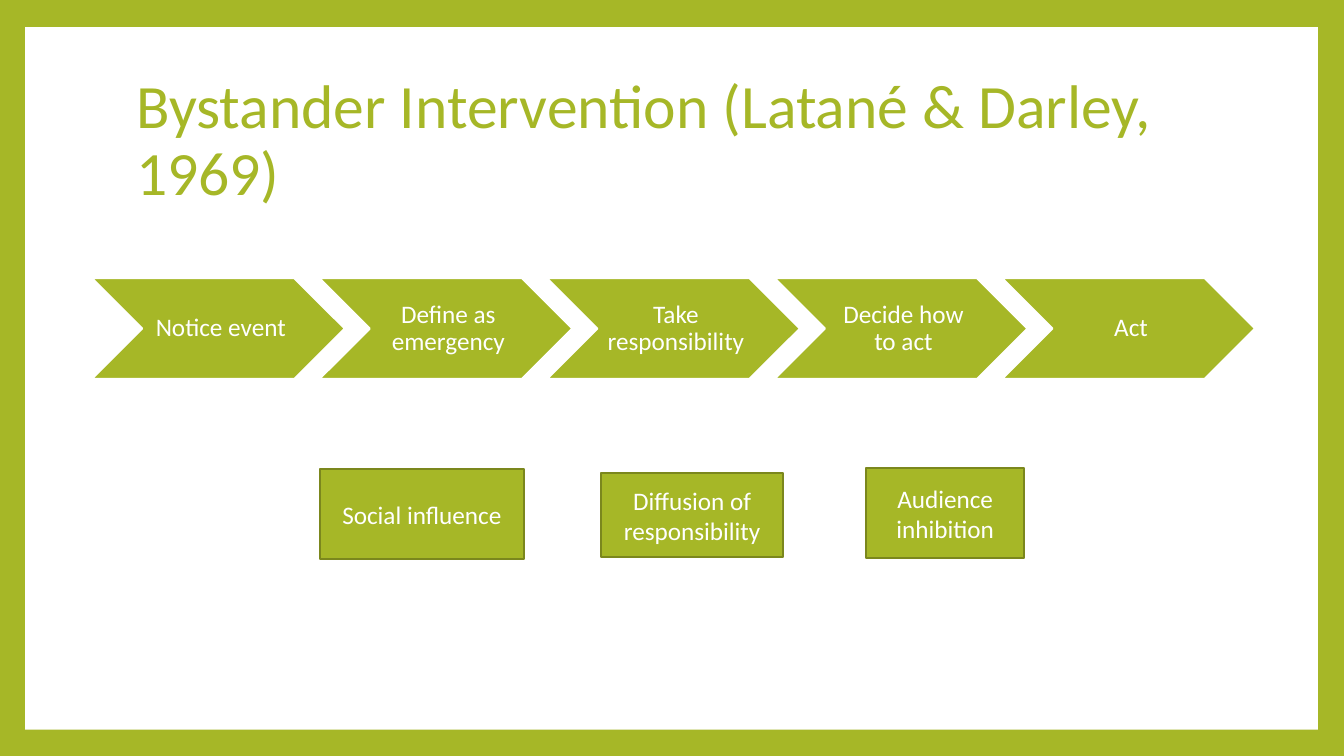
from pptx import Presentation
from pptx.dml.color import RGBColor
from pptx.enum import shapes, text
from pptx.util import Inches, Pt

TITLE = "Bystander Intervention (Latané & Darley, 1969)"
STEPS = ["Notice event", "Define as emergency", "Take responsibility",
         "Decide how to act", "Act"]
BARRIERS = [
    ("Social influence", (3.17, 4.65, 2.03, 0.9)),
    ("Diffusion of responsibility", (5.96, 4.69, 1.81, 0.84)),
    ("Audience inhibition", (8.59, 4.64, 1.57, 0.9)),
]

THEME = {
    "green": RGBColor.from_string("A6B727"),
    "edge": RGBColor.from_string("7B871D"),
    "white": RGBColor.from_string("FFFFFF"),
    "font": "Calibri", "title": Pt(44), "label": Pt(18), "line": Pt(1.5),
}
SIZE = (13.33, 7.5)
PANEL = (0.25, 0.27, 12.82, 6.97)
HEAD = (1.25, 0.67, 10.8, 1.48)
FLOW = {"left": 0.91, "top": 2.76, "wide": 2.51, "high": 1, "step": 2.257}
PADS = {"margin_left": Inches(0.08), "margin_right": Inches(0.03),
        "margin_top": Inches(0.03), "margin_bottom": Inches(0.03)}
KIND = shapes.MSO_SHAPE


def apply(item, values):
    for name, value in values.items():
        setattr(item, name, value)


def place(item, box):
    names = ("left", "top", "width", "height")
    apply(item, dict(zip(names, map(Inches, box))))


def write(item, words, size, color, align, spacing=None, pads=None):
    frame = item.text_frame
    frame.text = words
    apply(frame, {"word_wrap": True, "auto_size": text.MSO_AUTO_SIZE.NONE,
                  "vertical_anchor": text.MSO_ANCHOR.MIDDLE, **(pads or {})})
    para = frame.paragraphs[0]
    apply(para, {"alignment": align, "line_spacing": spacing})
    font = para.runs[0].font
    apply(font, {"name": THEME["font"], "size": THEME[size]})
    font.color.rgb = THEME[color]


def draw(slide, kind, box, fill, line=None):
    item = slide.shapes.add_shape(kind, *map(Inches, box))
    item.shadow.inherit = False
    item.fill.solid()
    item.fill.fore_color.rgb = THEME[fill]
    if line:
        item.line.color.rgb = THEME[line]
        item.line.width = THEME["line"]
    else:
        item.line.fill.background()
    return item


def main():
    deck = Presentation()
    deck.slide_width, deck.slide_height = map(Inches, SIZE)
    slide = deck.slides.add_slide(deck.slide_layouts[5])
    back = slide.background.fill
    back.solid()
    back.fore_color.rgb = THEME["green"]

    panel = draw(slide, KIND.RECTANGLE, PANEL, "white")
    title = slide.shapes.title
    panel._element.addnext(title._element)
    place(title, HEAD)
    write(title, TITLE, "title", "green", text.PP_ALIGN.LEFT, 0.9)

    mid = text.PP_ALIGN.CENTER
    for i, words in enumerate(STEPS):
        box = (FLOW["left"] + i * FLOW["step"], FLOW["top"],
               FLOW["wide"], FLOW["high"])
        step = draw(slide, KIND.CHEVRON, box, "green", "white")
        write(step, words, "label", "white", mid, 0.9, PADS)

    for words, box in BARRIERS:
        barrier = draw(slide, KIND.RECTANGLE, box, "green", "edge")
        write(barrier, words, "label", "white", mid)

    deck.save("out.pptx")


if __name__ == "__main__":
    main()
